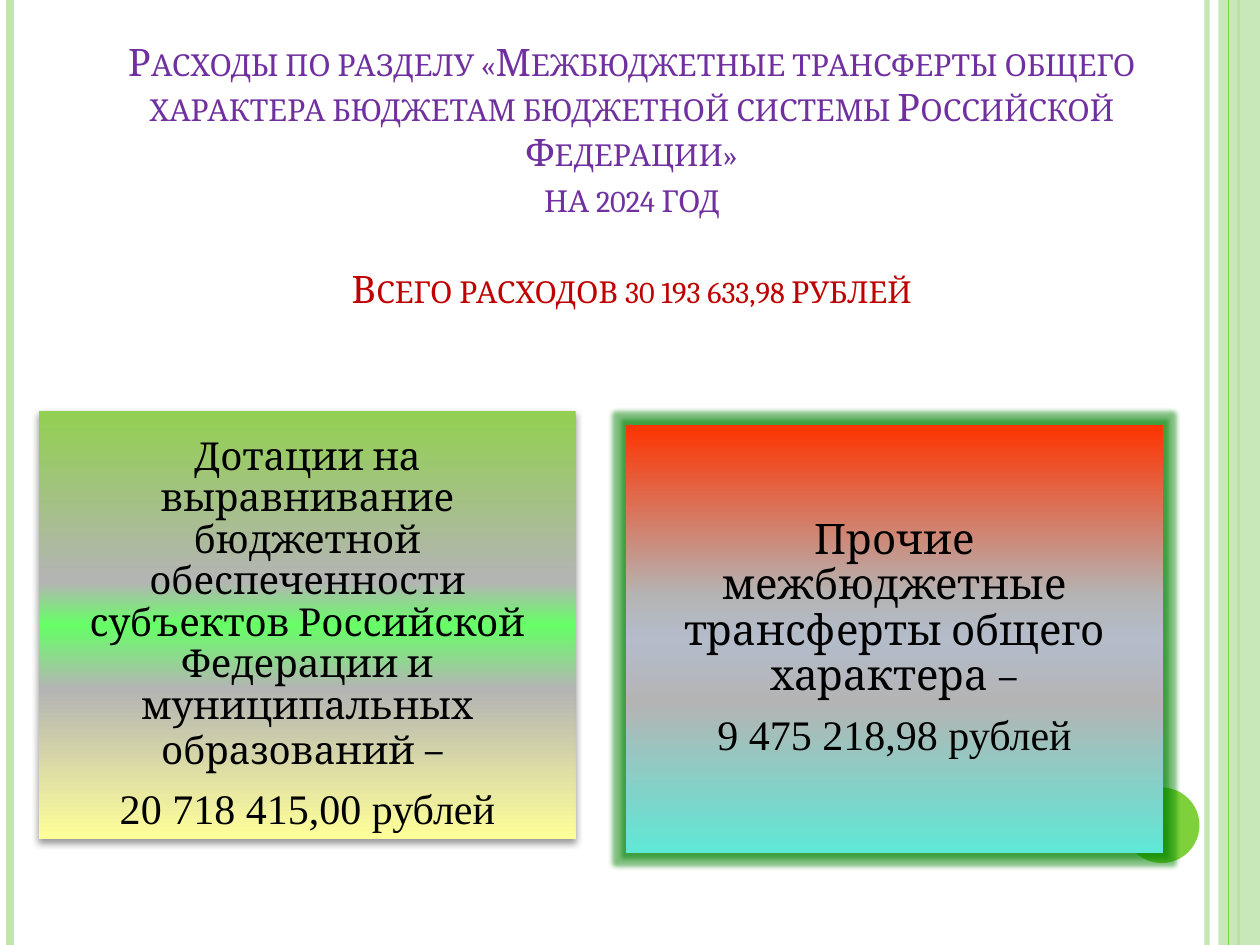
from lxml.etree import SubElement
from pptx import Presentation
from pptx.dml.color import RGBColor
from pptx.enum.shapes import MSO_CONNECTOR, MSO_SHAPE
from pptx.enum.text import MSO_ANCHOR, PP_ALIGN
from pptx.oxml.ns import qn
from pptx.util import Inches, Pt

THEME = {
    "font": "Cambria", "amount_font": "Times New Roman",
    "title_size": 21.6, "label_size": 22, "amount_size": 24,
    "title": "7030A0", "total": "C00000", "text": "000000",
    "pale": "C0E5AF", "green": "7FD13B",
    "shadow": "000000", "glow": "008000",
}

# text, colour, space before in points
TITLE = [
    ("Расходы по разделу «Межбюджетные трансферты общего характера "
     "бюджетам бюджетной системы Российской Федерации»", "title", 0),
    ("на 2024 год", "title", 0),
    ("Всего расходов 30 193 633,98 рублей", "total", 26),
]

# x, colour, width in points, opacity in percent
STRIPES_BEHIND_BAND = [
    (9.58, "pale", 3, 93),
    (0.08, "pale", 4.5, 100),
    (9.83, "green", 1.5, 100),
]
STRIPE_ON_BAND = (9.75, "green", 0.75, 100)

STOPS = (0, 40, 50, 65, 100)
CARD_SIZE = (4.26, 3.4)
CARDS = [
    {"at": (0.31, 3.26), "top_inset": 0.26, "effect": "shadow",
     "colors": ("92D050", "B4B4B4", "66FF66", "B4B4B4", "FFFF99"),
     "label": [("Дотации на выравнивание бюджетной обеспеченности субъектов "
                "Российской Федерации и муниципальных образований ", "label_size"),
               ("– ", "amount_size")],
     "amount": "20 718 415,00 рублей"},
    {"at": (4.97, 3.37), "top_inset": 0.1, "effect": "glow",
     "colors": ("FF3300", "B4B4B4", "B4BCCA", "B4B4B4", "5FE8D6"),
     "label": [("Прочие межбюджетные трансферты общего характера –", "amount_size")],
     "amount": "9 475 218,98 рублей"},
]


def rgb(name):
    return RGBColor.from_string(THEME[name])


def add_color(parent, value, opacity=100):
    color = SubElement(parent, qn("a:srgbClr"), val=value)
    set_opacity(color, opacity)


def set_opacity(color, opacity):
    if opacity < 100:
        SubElement(color, qn("a:alpha"), val=str(opacity * 1000))


def add_stripe(slide, x, color, width, opacity):
    line = slide.shapes.add_connector(
        MSO_CONNECTOR.STRAIGHT, Inches(x), 0, Inches(x), Inches(7.5))
    line.line.color.rgb = rgb(color)
    line.line.width = Pt(width)
    sp_pr = line._element.spPr
    set_opacity(next(sp_pr.iter(qn("a:srgbClr"))), opacity)
    SubElement(sp_pr, qn("a:effectLst"))


def add_shape(slide, kind, *box):
    sp = slide.shapes.add_shape(kind, *map(Inches, box))
    sp.shadow.inherit = False
    sp.line.fill.background()
    return sp


def add_solid(slide, kind, box, color, opacity=100):
    sp = add_shape(slide, kind, *box)
    sp.fill.solid()
    sp.fill.fore_color.rgb = rgb(color)
    set_opacity(next(sp._element.spPr.iter(qn("a:srgbClr"))), opacity)


def fill_gradient(sp, colors):
    sp.fill.gradient()
    sp.fill.gradient_angle = 270
    stops = next(sp._element.spPr.iter(qn("a:gsLst")))
    for stop in list(stops):
        stops.remove(stop)
    for pos, color in zip(STOPS, colors):
        add_color(SubElement(stops, qn("a:gs"), pos=str(pos * 1000)), color)


def add_effect(sp, effect):
    effects = sp._element.spPr.find(qn("a:effectLst"))
    if effect == "shadow":
        node = SubElement(effects, qn("a:outerShdw"), blurRad=str(Pt(4)),
                          dist=str(Pt(2)), dir="5400000", rotWithShape="0")
        add_color(node, THEME["shadow"], 40)
    else:
        node = SubElement(effects, qn("a:glow"), rad=str(Pt(5)))
        add_color(node, THEME["glow"], 50)


def add_paragraph(tf, first, font, color):
    p = tf.paragraphs[0] if first else tf.add_paragraph()
    p.alignment = PP_ALIGN.CENTER
    p.font.name = THEME[font]
    p.font.color.rgb = rgb(color)
    return p


def add_title(slide):
    tf = slide.shapes.add_textbox(*map(Inches, (0.35, 0.36, 9.33, 2.05))).text_frame
    tf.word_wrap = True
    tf.vertical_anchor = MSO_ANCHOR.MIDDLE
    for i, (text, color, before) in enumerate(TITLE):
        p = add_paragraph(tf, i == 0, "font", color)
        p.space_before = Pt(before)
        p.font.size = Pt(THEME["title_size"])
        r = p.add_run()
        r.text = text
        r.font._element.set("cap", "small")


def add_card(slide, card):
    sp = add_shape(slide, MSO_SHAPE.RECTANGLE, *card["at"], *CARD_SIZE)
    fill_gradient(sp, card["colors"])
    add_effect(sp, card["effect"])
    tf = sp.text_frame
    tf.word_wrap = True
    tf.vertical_anchor = MSO_ANCHOR.MIDDLE
    tf.margin_left = tf.margin_right = tf.margin_bottom = Inches(0.1)
    tf.margin_top = Inches(card["top_inset"])
    rows = [("font", card["label"]),
            ("amount_font", [(card["amount"], "amount_size")])]
    for i, (font, runs) in enumerate(rows):
        p = add_paragraph(tf, i == 0, font, "text")
        p.line_spacing = 0.9
        p.space_after = Pt(8.4)
        for text, size in runs:
            r = p.add_run()
            r.text = text
            r.font.size = Pt(THEME[size])


def main():
    prs = Presentation()
    prs.slide_width, prs.slide_height = Inches(10), Inches(7.5)
    slide = prs.slides.add_slide(prs.slide_layouts[6])
    for stripe in STRIPES_BEHIND_BAND:
        add_stripe(slide, *stripe)
    add_solid(slide, MSO_SHAPE.RECTANGLE, (9.67, 0, 0.33, 7.5), "pale", 87)
    add_stripe(slide, *STRIPE_ON_BAND)
    add_solid(slide, MSO_SHAPE.OVAL, (8.92, 6.25, 0.6, 0.6), "green")
    add_title(slide)
    for card in CARDS:
        add_card(slide, card)
    prs.save("out.pptx")


if __name__ == "__main__":
    main()
